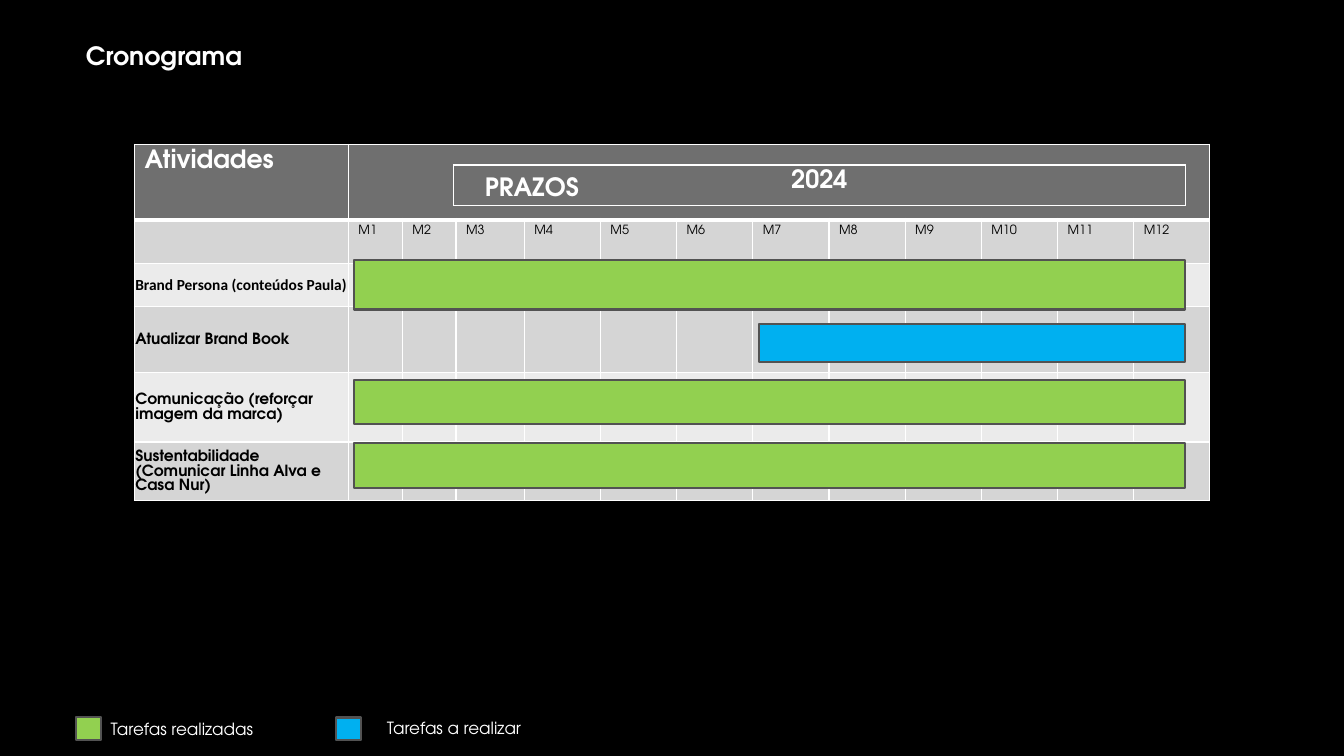
from dataclasses import dataclass

from lxml import etree
from pptx import Presentation
from pptx.dml.color import RGBColor
from pptx.enum.shapes import MSO_SHAPE
from pptx.enum.text import MSO_ANCHOR, MSO_AUTO_SIZE, PP_ALIGN
from pptx.oxml.ns import qn
from pptx.util import Cm, Pt

RECT = MSO_SHAPE.RECTANGLE
TOP, MIDDLE = MSO_ANCHOR.TOP, MSO_ANCHOR.MIDDLE
LEFT, CENTER = PP_ALIGN.LEFT, PP_ALIGN.CENTER
FIT = MSO_AUTO_SIZE.SHAPE_TO_FIT_TEXT
TITLE_ONLY = 5


@dataclass(frozen=True)
class Theme:
    font: str = "TeX Gyre Adventor"
    alt_font: str = "Calibri"
    black: str = "000000"
    white: str = "FFFFFF"
    header: str = "6F6F6F"
    band_dark: str = "D5D5D5"
    band_light: str = "EBEBEB"
    done: str = "92D050"
    todo: str = "00B0F0"
    outline: str = "525252"
    heading: float = 18
    legend: float = 12
    activity: float = 11
    month: float = 9
    grid: float = 1
    header_rule: float = 3
    bar_line: float = 1.5


@dataclass(frozen=True)
class Box:
    left: float
    top: float
    width: float
    height: float

    def emu(self) -> tuple:
        return Cm(self.left), Cm(self.top), Cm(self.width), Cm(self.height)


@dataclass(frozen=True)
class Activity:
    name: str
    row_height: float
    bar_left: float
    bar_top: float
    bar_height: float
    color: str
    font: str


@dataclass(frozen=True)
class LegendItem:
    label: str
    color: str
    swatch: Box
    text: Box


T = Theme()
BAR_LEFT, BAR_RIGHT = 8.92, 29.87
MONTHS = [f"M{n}" for n in range(1, 13)]
COLUMNS = [5.39, 1.36, 1.35, 1.72] + [1.92] * 9
HEADER_HEIGHT, MONTH_HEIGHT = 1.9, 1.09
ACTIVITIES = [
    Activity("Brand Persona (conteúdos Paula)", 1.09, BAR_LEFT, 6.56, 1.24, T.done, T.alt_font),
    Activity("Atualizar Brand Book", 1.67, 19.13, 8.16, 0.97, T.todo, T.font),
    Activity("Comunicação (reforçar imagem da marca)", 1.75, BAR_LEFT, 9.57, 1.12, T.done, T.font),
    Activity("Sustentabilidade (Comunicar Linha Alva e Casa Nur)", 1.48, BAR_LEFT, 11.17, 1.12,
             T.done, T.font),
]
LEGEND = [
    LegendItem("Tarefas realizadas", T.done,
               Box(1.91, 18.06, 0.64, 0.58), Box(2.54, 17.98, 5.51, 0.76)),
    LegendItem("Tarefas a realizar", T.todo,
               Box(8.46, 18.08, 0.64, 0.58), Box(9.5, 17.96, 5.51, 0.76)),
]


def write(tf, text: str, *, size: float, color: str = T.white, font: str = T.font,
          bold: bool = False, align=LEFT) -> None:
    p = tf.paragraphs[0]
    p.alignment = align
    r = p.add_run()
    r.text = text
    r.font.size = Pt(size)
    r.font.name = font
    r.font.bold = bold
    r.font.color.rgb = RGBColor.from_string(color)


def format_frame(tf) -> None:
    tf.word_wrap = True
    tf.auto_size = FIT
    tf.vertical_anchor = TOP


def add_title(s, text: str, box: Box) -> None:
    sp = s.shapes.title
    sp.left, sp.top, sp.width, sp.height = box.emu()
    format_frame(sp.text_frame)
    write(sp.text_frame, text, size=T.heading, bold=True)


def add_text(s, text: str, box: Box, *, size: float, bold: bool = False) -> None:
    tf = s.shapes.add_textbox(*box.emu()).text_frame
    format_frame(tf)
    write(tf, text, size=size, bold=bold)


def add_block(s, box: Box, color: str) -> None:
    sp = s.shapes.add_shape(RECT, *box.emu())
    sp.shadow.inherit = False
    sp.fill.solid()
    sp.fill.fore_color.rgb = RGBColor.from_string(color)
    sp.line.color.rgb = RGBColor.from_string(T.outline)
    sp.line.width = Pt(T.bar_line)


def set_borders(cell, top: float = T.grid, bottom: float = T.grid) -> None:
    tc_pr = cell._tc.get_or_add_tcPr()
    widths = {"a:lnL": T.grid, "a:lnR": T.grid, "a:lnT": top, "a:lnB": bottom}
    for tag, width in widths.items():
        ln = etree.SubElement(tc_pr, qn(tag), w=str(Pt(width)))
        fill = etree.SubElement(ln, qn("a:solidFill"))
        etree.SubElement(fill, qn("a:srgbClr"), val=T.white)


def add_grid(s, left: float, top: float, columns: list[float], rows: list[float]):
    box = Box(left, top, sum(columns), sum(rows))
    table = s.shapes.add_table(len(rows), len(columns), *box.emu()).table
    table.first_row = False
    table.horz_banding = False
    for column, width in zip(table.columns, columns):
        column.width = Cm(width)
    for row, height in zip(table.rows, rows):
        row.height = Cm(height)
    return table


def add_schedule(s) -> None:
    rows = [HEADER_HEIGHT, MONTH_HEIGHT] + [a.row_height for a in ACTIVITIES]
    table = add_grid(s, 3.39, 3.64, COLUMNS, rows)
    for i, row in enumerate(table.rows):
        color = T.header if i == 0 else T.band_dark if i % 2 else T.band_light
        for cell in row.cells:
            set_borders(cell, top=T.header_rule if i == 1 else T.grid,
                        bottom=T.header_rule if i == 0 else T.grid)
            cell.fill.solid()
            cell.fill.fore_color.rgb = RGBColor.from_string(color)
    table.cell(0, 1).merge(table.cell(0, len(MONTHS)))
    write(table.cell(0, 0).text_frame, "Atividades", size=T.heading, bold=True)
    for j, month in enumerate(MONTHS, 1):
        write(table.cell(1, j).text_frame, month, size=T.month, color=T.black)
    for i, activity in enumerate(ACTIVITIES, 2):
        cell = table.cell(i, 0)
        cell.vertical_anchor = MIDDLE
        cell.margin_left = cell.margin_top = Cm(0.02)
        cell.margin_right = cell.margin_bottom = 0
        write(cell.text_frame, activity.name, size=T.activity, color=T.black,
              font=activity.font, bold=True)


def add_year(s, year: str) -> None:
    cell = add_grid(s, 11.43, 4.16, [18.44], [1.02]).cell(0, 0)
    set_borders(cell)
    cell.fill.background()
    write(cell.text_frame, year, size=T.heading, bold=True, align=CENTER)


def main() -> None:
    prs = Presentation()
    prs.slide_width, prs.slide_height = Cm(33.87), Cm(19.05)
    s = prs.slides.add_slide(prs.slide_layouts[TITLE_ONLY])
    s.background.fill.solid()
    s.background.fill.fore_color.rgb = RGBColor.from_string(T.black)
    add_title(s, "Cronograma", Box(1.91, 0.89, 23.29, 1.02))
    for item in LEGEND:
        add_block(s, item.swatch, item.color)
        add_text(s, item.label, item.text, size=T.legend)
    add_schedule(s)
    add_text(s, "PRAZOS", Box(11.97, 4.19, 7.14, 1.02), size=T.heading, bold=True)
    add_year(s, "2024")
    for a in ACTIVITIES:
        add_block(s, Box(a.bar_left, a.bar_top, BAR_RIGHT - a.bar_left, a.bar_height), a.color)
    prs.save("out.pptx")


if __name__ == "__main__":
    main()
